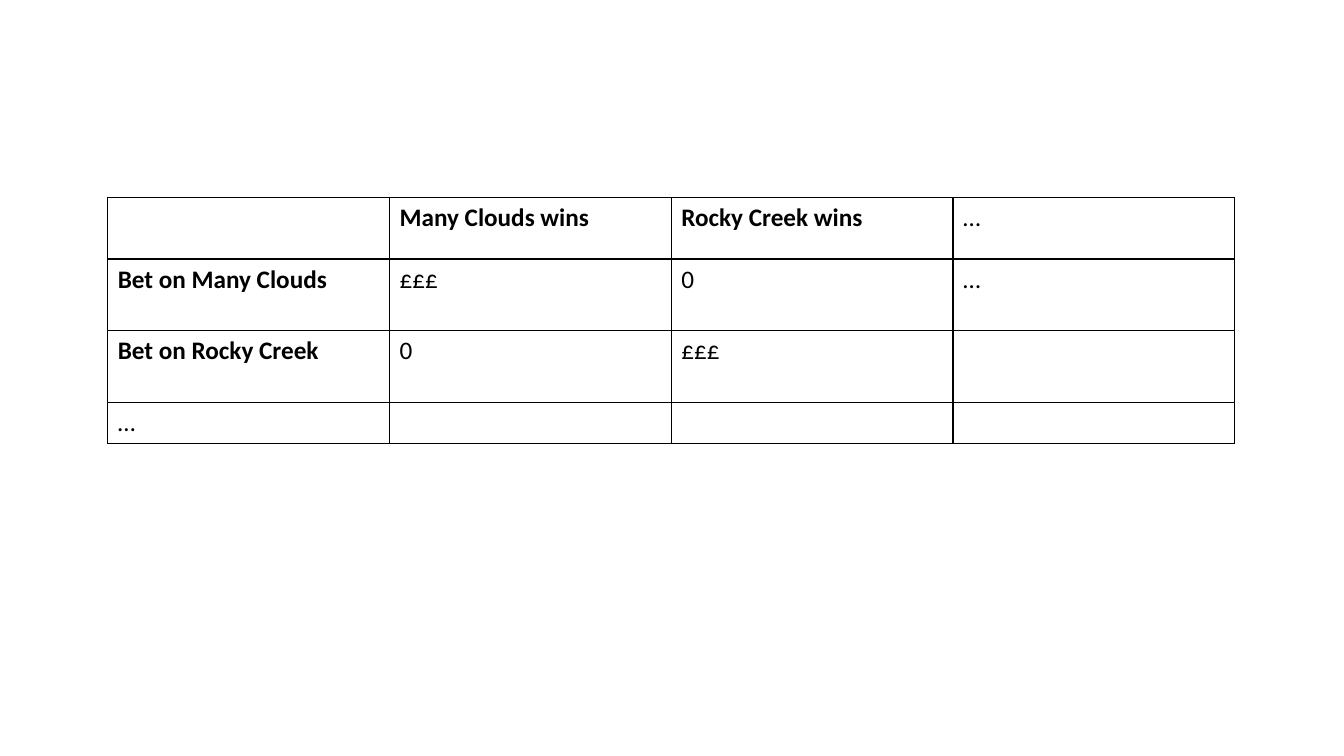
from lxml import etree
from pptx import Presentation
from pptx.dml.color import RGBColor
from pptx.oxml.ns import qn
from pptx.util import Pt

ROWS = [
    ["", "Many Clouds wins", "Rocky Creek wins", "…"],
    ["Bet on Many Clouds", "£££", "0", "…"],
    ["Bet on Rocky Creek", "0", "£££", ""],
    ["…", "", "", ""],
]
ROW_HEIGHTS = [44, 51.25, 51.25, 29]
LEFT, TOP, COLUMN_WIDTH = 77, 141, 201.25
BLACK = "000000"
BLANK_LAYOUT = 6
BORDERS = ("a:lnL", "a:lnR", "a:lnT", "a:lnB")


def color(value):
    return RGBColor.from_string(value)


def add_borders(cell):
    properties = cell._tc.get_or_add_tcPr()
    for position, tag in enumerate(BORDERS):
        line = etree.Element(qn(tag), w=str(Pt(1)))
        fill = etree.SubElement(line, qn("a:solidFill"))
        etree.SubElement(fill, qn("a:srgbClr"), val=BLACK)
        properties.insert(position, line)


def fill_cell(cell, text, bold):
    cell.text = text
    cell.fill.background()
    add_borders(cell)
    font = cell.text_frame.paragraphs[0].font
    font.name = "Calibri"
    font.size = Pt(18)
    font.bold = bold
    font.color.rgb = color(BLACK)


def main():
    presentation = Presentation()
    presentation.slide_width = Pt(960)
    presentation.slide_height = Pt(540)
    slide = presentation.slides.add_slide(presentation.slide_layouts[BLANK_LAYOUT])

    column_count = len(ROWS[0])
    table = slide.shapes.add_table(
        len(ROWS), column_count, Pt(LEFT), Pt(TOP),
        Pt(COLUMN_WIDTH * column_count), Pt(sum(ROW_HEIGHTS)),
    ).table
    table.first_row = False
    table.horz_banding = False

    for column in table.columns:
        column.width = Pt(COLUMN_WIDTH)
    for row_index, (texts, height) in enumerate(zip(ROWS, ROW_HEIGHTS)):
        table.rows[row_index].height = Pt(height)
        for column_index, text in enumerate(texts):
            is_heading = row_index == 0 or column_index == 0
            fill_cell(table.cell(row_index, column_index), text, is_heading and text != "…")

    presentation.save("out.pptx")


if __name__ == "__main__":
    main()
